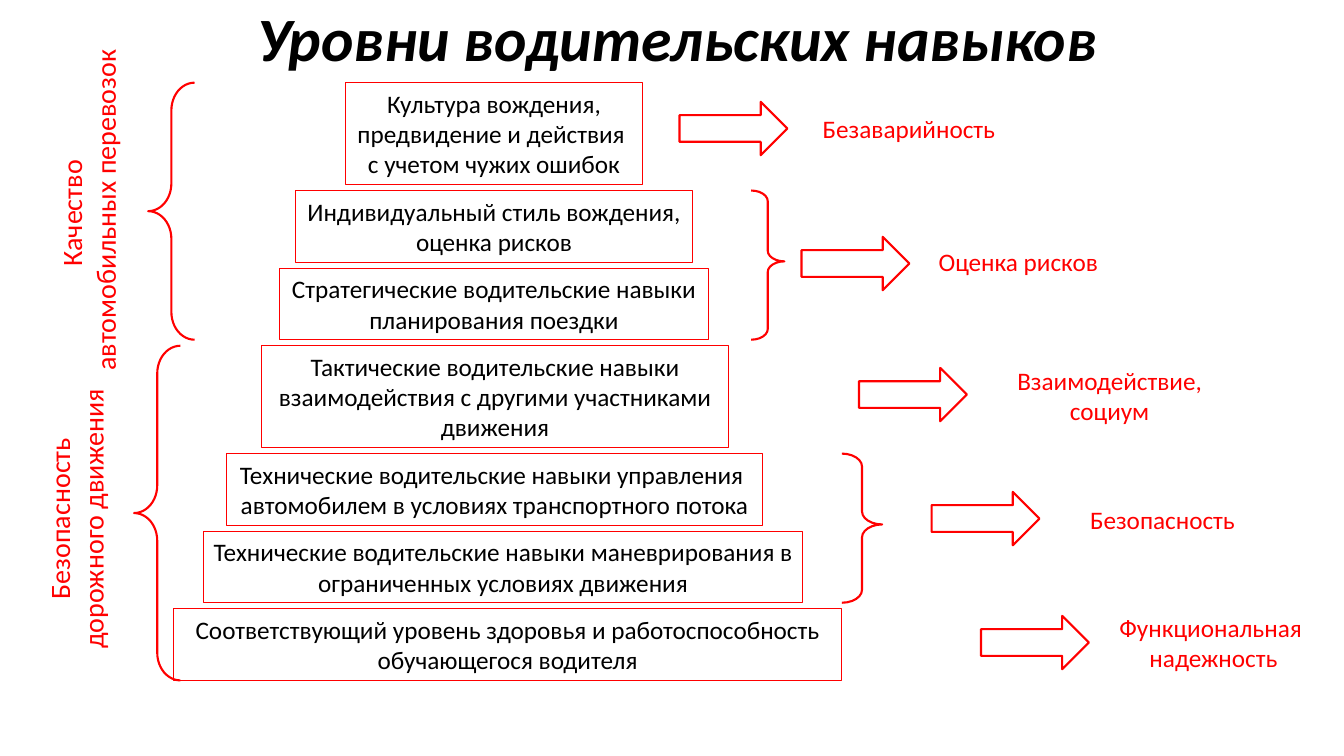
"""Build the slide about the levels of driving skills."""
from pptx import Presentation
from pptx import util as u
from pptx.dml.color import RGBColor
from pptx.enum import shapes, text

RED = RGBColor(0xFF, 0x00, 0x00)
BLACK = RGBColor(0x00, 0x00, 0x00)
WHITE = RGBColor(0xFF, 0xFF, 0xFF)

prs = Presentation()
prs.slide_width, prs.slide_height = u.Inches(13.33), u.Inches(7.5)
COL, ROW = prs.slide_width / 133.3, prs.slide_height / 75
s = prs.slides.add_slide(prs.slide_layouts[6])


def add(kind, left, top, width, height, line=1.5, fill=None):
    """Add a text box, or an outlined shape when a kind is given, in grid units."""
    box = [round(v) for v in (left * COL, top * ROW, width * COL, height * ROW)]
    if kind is None:
        return s.shapes.add_textbox(*box)
    sp = s.shapes.add_shape(kind, *box)
    sp.shadow.inherit = False
    sp.line.color.rgb, sp.line.width = RED, u.Pt(line)
    if fill is None:
        sp.fill.background()
    else:
        sp.fill.solid()
        sp.fill.fore_color.rgb = fill
    return sp


def write(sp, lines, color, size=18, wrap=False, **font):
    """Write centred paragraphs into a shape."""
    tf = sp.text_frame
    tf.word_wrap, tf.vertical_anchor = wrap, text.MSO_ANCHOR.MIDDLE
    for i, line in enumerate(lines):
        p = tf.add_paragraph() if i else tf.paragraphs[0]
        p.alignment = text.PP_ALIGN.CENTER
        r = p.add_run()
        r.text = line
        r.font.color.rgb = color
        for name, value in {"name": "Calibri", "size": u.Pt(size), **font}.items():
            setattr(r.font, name, value)
    return tf


KIND = shapes.MSO_SHAPE

title = write(add(None, 9.7, 0.2, 115, 7.9), ["Уровни водительских навыков"], BLACK,
              size=44, wrap=True, bold=True, italic=True)
title.paragraphs[0].line_spacing = 0.9

# center, width, number of lines, wrapping, paragraphs
levels = [
    (49, 29.4, 3, False, ["Культура вождения,", "предвидение и действия ", "с учетом чужих ошибок"]),
    (49, 39.4, 2, False, ["Индивидуальный стиль вождения,", "оценка рисков"]),
    (49, 42.6, 2, False, ["Стратегические водительские навыки", "планирования поездки"]),
    (49.1, 46.4, 3, True, ["Тактические водительские навыки",
                           "взаимодействия с другими участниками движения"]),
    (49.05, 53.1, 2, False, ["Технические водительские навыки управления ",
                             "автомобилем в условиях транспортного потока"]),
    (49.9, 59.4, 2, True, ["Технические водительские навыки маневрирования "
                           "в ограниченных условиях движения"]),
    (50.35, 66.3, 2, True, ["Соответствующий уровень здоровья и работоспособность "
                            "обучающегося водителя"]),
]
GAP, LINE, PAD = 0.6, 3, 1.1
spans, top = [], 8.2
for center, width, count, wrap, lines in levels:
    height = count * LINE + PAD
    sp = add(KIND.RECTANGLE, center - width / 2, top, width, height, line=0.75)
    write(sp, lines, BLACK, wrap=wrap)
    spans.append((top, top + height))
    top += height + GAP

braces = [
    (KIND.RIGHT_BRACE, 74.5, 3.3, 1, 2, 0.322, 0.475),
    (KIND.RIGHT_BRACE, 83.5, 4, 4, 5, 0.322, 0.475),
    (KIND.LEFT_BRACE, 14.7, 4.6, 0, 2, 0.598, 0.5),
    (KIND.LEFT_BRACE, 13.3, 4.6, 3, 6, 0.598, 0.5),
]
for kind, left, width, first, last, curl, tip in braces:
    start, end = spans[first][0], spans[last][1]
    sp = add(kind, left, start, width, end - start)
    sp.adjustments[0], sp.adjustments[1] = curl, tip

outcomes = [
    (67.4, 10.1, 80.5, 10.7, 19.3, ["Безаварийность"]),
    (79.5, 23.5, 92, 23.9, 18, ["Оценка рисков"]),
    (85.2, 36.5, 99.8, 35.7, 20.5, ["Взаимодействие,", "социум"]),
    (92.4, 48.8, 107, 49.5, 16.6, ["Безопасность"]),
    (97.3, 61.1, 109.9, 60.2, 20.9, ["Функциональная ", "надежность"]),
]
for arrow_left, arrow_top, left, top, width, lines in outcomes:
    add(KIND.RIGHT_ARROW, arrow_left, arrow_top, 10.7, 5.3, fill=WHITE)
    write(add(None, left, top, width, len(lines) * LINE + PAD), lines, RED)

goals = [
    (4.3, 4.3, 33.1, ["Качество ", "автомобильных перевозок"]),
    (3.1, 38, 26.9, ["Безопасность", "дорожного движения"]),
]
for left, top, height, lines in goals:
    tf = write(add(None, left, top, 8.8, height), lines, RED, size=20)
    tf._txBody.bodyPr.set("vert", "vert270")

prs.save("out.pptx")
